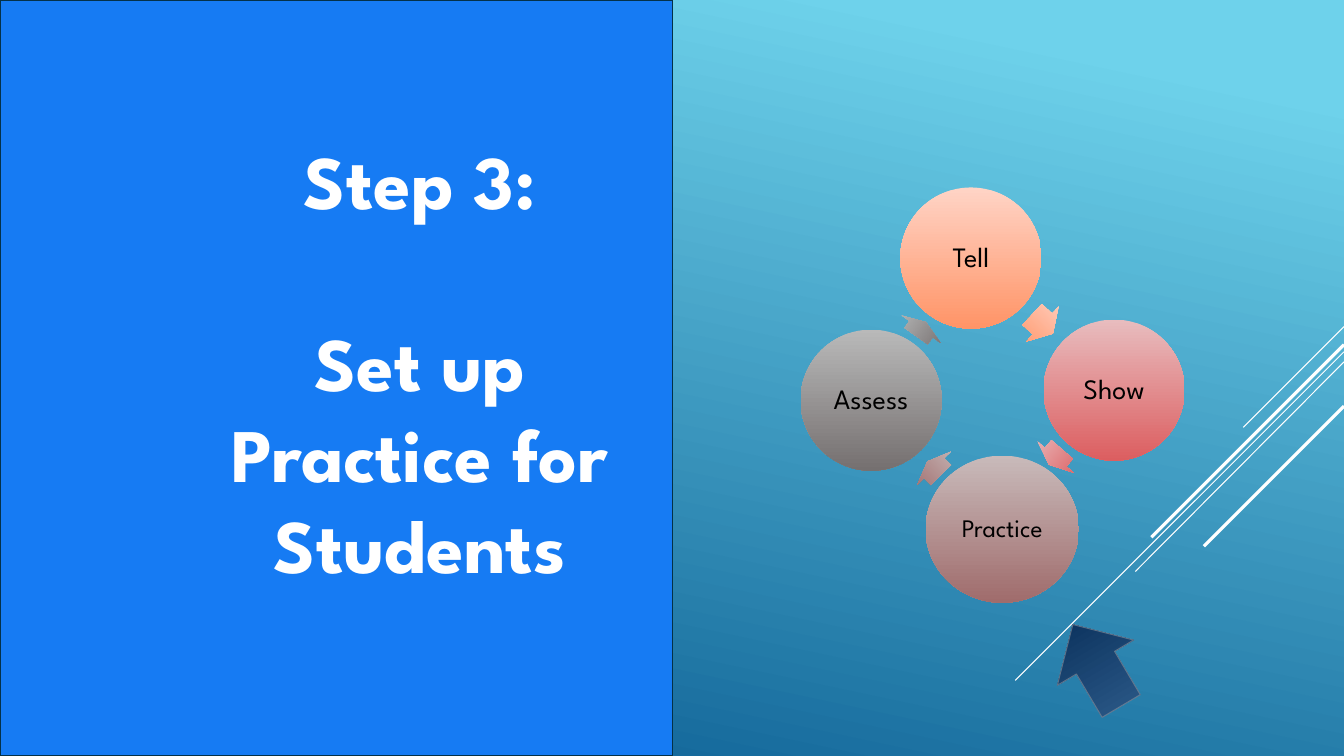
from lxml.etree import SubElement
from pptx import Presentation
from pptx.dml.color import RGBColor
from pptx.enum.shapes import MSO_CONNECTOR, MSO_SHAPE
from pptx.enum.text import MSO_ANCHOR, PP_ALIGN
from pptx.oxml.ns import qn
from pptx.util import Inches, Pt

FONT = "League Spartan"
WHITE = RGBColor(0xFF, 0xFF, 0xFF)
BLACK = RGBColor(0x00, 0x00, 0x00)
PANEL_BLUE = RGBColor(0x16, 0x7B, 0xF3)
PANEL_EDGE = RGBColor(0x04, 0x31, 0x48)
POINTER_EDGE = RGBColor(0x89, 0x91, 0x9C)
SKY = (RGBColor(0x6E, 0xD2, 0xEB), RGBColor(0x06, 0x58, 0x8E))
NAVY = (RGBColor(0x31, 0x61, 0x90), RGBColor(0x04, 0x28, 0x53))
ORANGE = (RGBColor(0xFF, 0xD4, 0xC6), RGBColor(0xFF, 0x94, 0x67))
RED = (RGBColor(0xE8, 0xBC, 0xBE), RGBColor(0xDC, 0x5E, 0x60))
MAUVE = (RGBColor(0xC8, 0xBA, 0xBA), RGBColor(0xA0, 0x6C, 0x6C))
GRAY = (RGBColor(0xB9, 0xB9, 0xB9), RGBColor(0x75, 0x70, 0x70))

RAYS = [
    (13.33, 3.24, 12.33, 4.24, 0.75),
    (13.33, 3.49, 10.07, 6.75, 0.75),
    (13.33, 3.59, 11.26, 5.67, 0.75),
    (13.33, 3.42, 11.42, 5.33, 2.25),
    (13.33, 4.03, 11.94, 5.42, 2.25),
]
STAGES = [
    ("Tell", 20, (8.93, 1.86, 1.4, 1.4), ORANGE,
     MSO_SHAPE.RIGHT_ARROW, (10.2, 2.98, 0.28, 0.47), 42.7),
    ("Show", 20, (10.35, 3.17, 1.4, 1.4), RED,
     MSO_SHAPE.LEFT_ARROW, (10.37, 4.3, 0.2, 0.47), 310.9),
    ("Practice", 18, (9.18, 4.52, 1.52, 1.46), MAUVE,
     MSO_SHAPE.LEFT_ARROW, (9.17, 4.41, 0.19, 0.47), 45.3),
    ("Assess", 20, (7.94, 3.27, 1.4, 1.4), GRAY,
     MSO_SHAPE.RIGHT_ARROW, (9.05, 3.03, 0.17, 0.47), 305.1),
]


class SlideBuilder:
    """Draws styled elements on the current slide."""

    def __init__(self, page, font):
        self.page = page
        self.font = font

    def gradient(self, fill, colors, angle=90, start=0):
        fill.gradient()
        fill.gradient_angle = 360 - angle
        for stop, color, position in zip(fill.gradient_stops, colors, (start, 1)):
            stop.color.rgb = color
            stop.position = position

    def ray(self, x1, y1, x2, y2, width):
        line = self.page.shapes.add_connector(
            MSO_CONNECTOR.STRAIGHT, *map(Inches, (x1, y1, x2, y2)))
        line.line.color.rgb = WHITE
        line.line.width = Pt(width)
        SubElement(line._element.spPr, qn("a:effectLst"))

    def shape(self, kind, place, colors, rotation=0):
        shape = self.page.shapes.add_shape(kind, *map(Inches, place))
        shape.shadow.inherit = False
        shape.rotation = rotation
        shape.line.fill.background()
        if isinstance(colors, RGBColor):
            shape.fill.solid()
            shape.fill.fore_color.rgb = colors
        else:
            self.gradient(shape.fill, colors)
        return shape

    def outline(self, shape, color, width, opacity=100):
        shape.line.color.rgb = color
        shape.line.width = Pt(width)
        if opacity < 100:
            tint = shape.line._ln.find(".//" + qn("a:srgbClr"))
            SubElement(tint, qn("a:alpha"), val=str(opacity * 1000))

    def style(self, paragraph, text, size, color, bold=False):
        paragraph.text = text
        paragraph.alignment = PP_ALIGN.CENTER
        paragraph.font.name = self.font
        paragraph.font.size = Pt(size)
        paragraph.font.bold = bold
        paragraph.font.color.rgb = color

    def stage(self, label, size, place, colors):
        frame = self.shape(MSO_SHAPE.OVAL, place, colors).text_frame
        frame.word_wrap = False
        frame.vertical_anchor = MSO_ANCHOR.MIDDLE
        frame.margin_left = frame.margin_right = 0
        frame.margin_top = frame.margin_bottom = 0
        self.style(frame.paragraphs[0], label, size, BLACK)
        frame.paragraphs[0].line_spacing = 0.9

    def cycle_arrow(self, kind, place, colors, rotation):
        arrow = self.shape(kind, place, colors, rotation)
        arrow.adjustments[0] = 0.6
        arrow.adjustments[1] = 0.5

    def title(self, place, lines, size, pitch):
        box = self.page.shapes.add_textbox(*map(Inches, place))
        frame = box.text_frame
        frame.word_wrap = True
        frame.vertical_anchor = MSO_ANCHOR.MIDDLE
        for index, text in enumerate(lines):
            para = frame.add_paragraph() if index else frame.paragraphs[0]
            self.style(para, text, size, WHITE, bold=True)
            para.line_spacing = Pt(pitch)
            para.space_before = Pt(pitch if index else 0)


def main():
    deck = Presentation()
    deck.slide_width, deck.slide_height = Inches(13.33), Inches(7.5)
    page = deck.slides.add_slide(deck.slide_layouts[6])
    builder = SlideBuilder(page, FONT)
    builder.gradient(page.background.fill, SKY, angle=102, start=0.1)
    for ray in RAYS:
        builder.ray(*ray)
    panel = builder.shape(MSO_SHAPE.RECTANGLE, (0, 0, 6.67, 7.5), PANEL_BLUE)
    builder.outline(panel, PANEL_EDGE, 1.25)
    pointer = builder.shape(
        MSO_SHAPE.DOWN_ARROW, (10.44, 6.13, 0.88, 0.94), NAVY, 149.3)
    builder.outline(pointer, POINTER_EDGE, 0.75, opacity=60)
    builder.title((2.08, 2.96, 4.17, 1.25),
                  ("Step 3:", "Set up Practice for Students"), 54, 65)
    for label, size, place, colors, arrow, arrow_place, rotation in STAGES:
        builder.stage(label, size, place, colors)
        builder.cycle_arrow(arrow, arrow_place, colors, rotation)
    deck.save("out.pptx")


if __name__ == "__main__":
    main()
